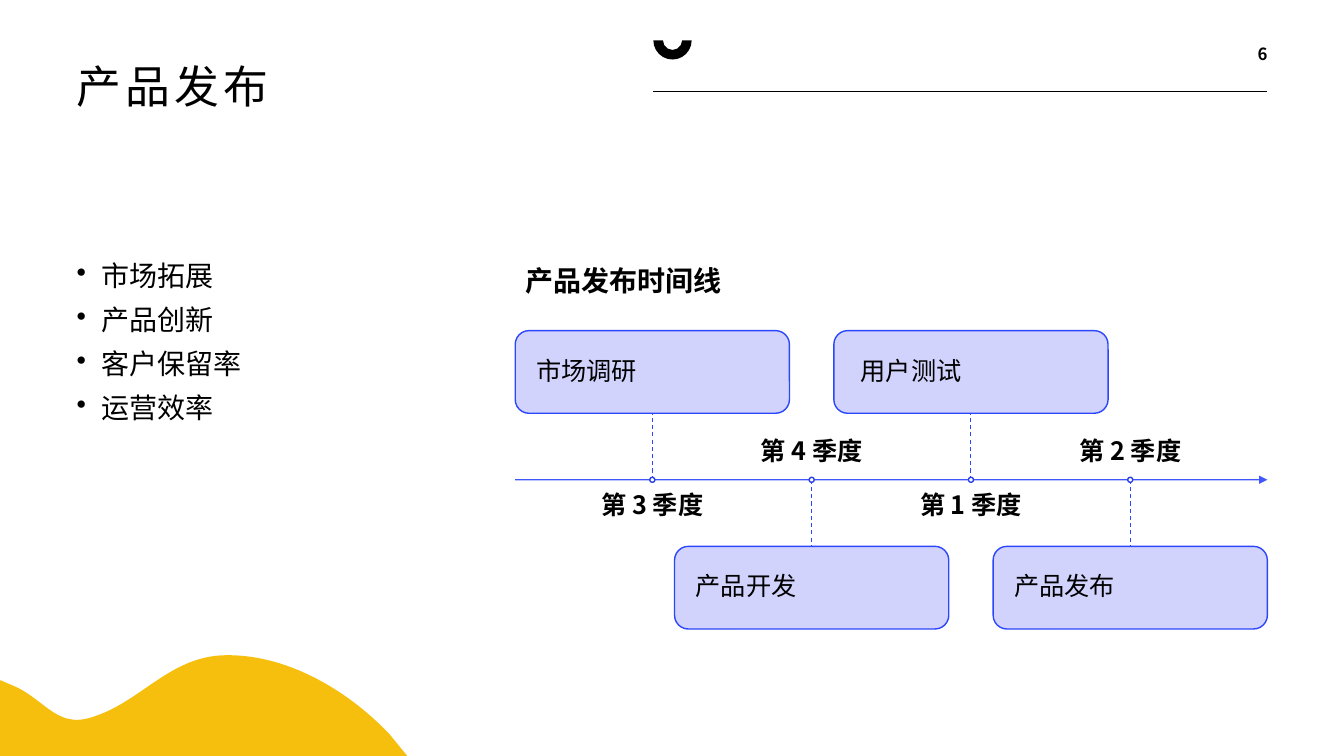
from lxml.etree import SubElement
from pptx import Presentation
from pptx.dml.color import RGBColor
from pptx.enum.dml import MSO_LINE
from pptx.enum.shapes import MSO_CONNECTOR, MSO_SHAPE
from pptx.enum.text import MSO_ANCHOR, PP_ALIGN
from pptx.oxml.ns import qn
from pptx.util import Inches, Pt

FONT = "Noto Sans CJK SC"
COLORS = {"ink": "000000", "paper": "FFFFFF", "wave": "F6BF0E", "card": "CDCFFD",
          "timeline": "2C46FB", "marker": "2840E4"}
AXIS_Y = 4.76
FIRST_QUARTER_X, QUARTER_STEP = 6.47, 1.58
CARD_WIDTH, CARD_HEIGHT = 2.72, 0.82
LABEL_WIDTH, LABEL_HEIGHT = 2.39, 0.39
MARKER_SIZE = 0.05
QUARTERS = [("第 3 季度", "市场调研"), ("第 4 季度", "产品开发"),
            ("第 1 季度", " 用户测试"), ("第 2 季度", "产品发布")]
GOALS = ["市场拓展", "产品创新", "客户保留率", "运营效率"]
WAVE_START = (2.26, 6.5)
WAVE_RIGHT = [((2.84, 6.5), (3.43, 6.83), (3.86, 7.28))]
WAVE_CORNERS = [(4.04, 7.5), (0, 7.5), (0, 6.75), (0.01, 6.75)]
WAVE_LEFT = [((0.07, 6.78), (0.13, 6.8), (0.19, 6.83)),
             ((0.47, 6.98), (0.59, 7.23), (0.93, 7.11)),
             ((1.42, 6.95), (1.69, 6.5), (2.26, 6.5))]


def rgb(name):
    """Return the named palette colour."""
    return RGBColor.from_string(COLORS[name])


def set_opacity(colored, percent):
    """Make the solid fill below an element partly transparent."""
    color = colored.find(".//" + qn("a:srgbClr"))
    SubElement(color, qn("a:alpha"), val=str(percent * 1000))


def write(frame, lines, size, bold=False, align=PP_ALIGN.LEFT, anchor=MSO_ANCHOR.TOP,
          insets=(0, 0, 0, 0), before=0, spacing=0, bullet=False):
    """Fill a text frame with one paragraph per line."""
    frame.word_wrap = True
    frame.vertical_anchor = anchor
    (frame.margin_left, frame.margin_top,
     frame.margin_right, frame.margin_bottom) = map(Inches, insets)
    for index, line in enumerate(lines):
        paragraph = frame.add_paragraph() if index else frame.paragraphs[0]
        paragraph.alignment = align
        paragraph.line_spacing = 0.9
        paragraph.space_before = Pt(before)
        if bullet:
            properties = paragraph._p.get_or_add_pPr()
            properties.set("marL", str(Inches(0.25)))
            properties.set("indent", str(Inches(-0.25)))
            SubElement(properties, qn("a:buChar"), char="•")
        run = paragraph.add_run()
        run.text = line
        font = run.font
        font.size, font.bold, font.name = Pt(size), bold, FONT
        font.color.rgb = rgb("ink")
        character = run._r.get_or_add_rPr()
        SubElement(character, qn("a:ea"), typeface=FONT)
        if spacing:
            character.set("spc", str(spacing * 100))


def add_text(slide, box, lines, size, **style):
    """Add a text box at left, top, width, height."""
    write(slide.shapes.add_textbox(*map(Inches, box)).text_frame, lines, size, **style)


def paint(shape, fill, line=None):
    """Give a shape its fill and outline."""
    shape.shadow.inherit = False
    shape.fill.solid()
    shape.fill.fore_color.rgb = rgb(fill)
    if line:
        shape.line.color.rgb = rgb(line)
        shape.line.width = Pt(1)
    else:
        shape.line.fill.background()


def add_preset(slide, preset, box, fill, line=None):
    """Add a painted preset shape."""
    shape = slide.shapes.add_shape(preset, *map(Inches, box))
    paint(shape, fill, line)
    return shape


def add_line(slide, start, end, color, width):
    """Add a straight line without a shadow."""
    line = slide.shapes.add_connector(MSO_CONNECTOR.STRAIGHT, *map(Inches, start + end))
    line.line.color.rgb = rgb(color)
    line.line.width = Pt(width)
    SubElement(line._element.spPr, qn("a:effectLst"))
    return line


def curve_points(start, curves, steps=24):
    """Return points along a chain of cubic curves."""
    points = []
    for first, second, end in curves:
        for step in range(1, steps + 1):
            t = step / steps
            weights = ((1 - t) ** 3, 3 * t * (1 - t) ** 2, 3 * t * t * (1 - t), t ** 3)
            anchors = (start, first, second, end)
            points.append(tuple(sum(w * p[axis] for w, p in zip(weights, anchors))
                                for axis in (0, 1)))
        start = end
    return points


def add_wave(slide):
    """Add the wave in the bottom left corner."""
    outline = (curve_points(WAVE_START, WAVE_RIGHT) + WAVE_CORNERS
               + curve_points(WAVE_CORNERS[-1], WAVE_LEFT))
    builder = slide.shapes.build_freeform(*map(Inches, WAVE_START), scale=1.0)
    builder.add_line_segments([(Inches(x), Inches(y)) for x, y in outline], close=True)
    paint(builder.convert_to_shape(), "wave")


def add_axis(slide):
    """Add the timeline arrow."""
    axis = add_line(slide, (5.11, AXIS_Y), (12.57, AXIS_Y), "timeline", 1)
    outline = axis.line._get_or_add_ln()
    set_opacity(outline, 90)
    SubElement(outline, qn("a:tailEnd"), type="triangle")


def add_quarter(slide, center, label, task, above):
    """Add one quarter: its card, stem, label and marker."""
    card_top, stem_end = (3.28, 4.1) if above else (5.42, 5.42)
    label_top, label_anchor = (4.89, MSO_ANCHOR.TOP) if above else (4.23, MSO_ANCHOR.BOTTOM)
    card = add_preset(slide, MSO_SHAPE.ROUNDED_RECTANGLE,
                      (center - CARD_WIDTH / 2, card_top, CARD_WIDTH, CARD_HEIGHT),
                      "card", "timeline")
    set_opacity(card._element.spPr.find(qn("a:solidFill")), 90)
    write(card.text_frame, [task], 18, anchor=MSO_ANCHOR.MIDDLE,
          insets=(0.17, 0.17, 0.17, 0.17))
    stem = add_line(slide, (center, AXIS_Y), (center, stem_end), "timeline", 0.75)
    stem.line.dash_style = MSO_LINE.DASH
    add_text(slide, (center - LABEL_WIDTH / 2, label_top, LABEL_WIDTH, LABEL_HEIGHT),
             [label], 18, bold=True, align=PP_ALIGN.CENTER, anchor=label_anchor)
    add_preset(slide, MSO_SHAPE.OVAL,
               (center - MARKER_SIZE / 2, AXIS_Y - MARKER_SIZE / 2, MARKER_SIZE, MARKER_SIZE),
               "paper", "marker")


def main():
    """Build and save the slide."""
    deck = Presentation()
    deck.slide_width, deck.slide_height = Inches(13.33), Inches(7.5)
    slide = deck.slides.add_slide(deck.slide_layouts[6])
    add_wave(slide)
    add_line(slide, (6.48, 0.91), (12.57, 0.91), "ink", 0.75)
    add_preset(slide, MSO_SHAPE.BLOCK_ARC, (6.48, 0.21, 0.38, 0.38), "ink").rotation = 180
    add_text(slide, (0.76, 0.59, 5.45, 1.96), ["产品发布"], 32, spacing=3,
             insets=(0, 0.05, 0.1, 0.05))
    add_text(slide, (12.19, 0.17, 0.38, 0.52), ["6"], 12, bold=True,
             align=PP_ALIGN.RIGHT, anchor=MSO_ANCHOR.BOTTOM, insets=(0, 0.05, 0, 0.05))
    add_text(slide, (0.76, 2.6, 3.87, 3.9), GOALS, 20, before=10, bullet=True,
             insets=(0, 0, 0.1, 0.05))
    add_text(slide, (5.11, 2.6, 7.45, 0.41), ["产品发布时间线"], 20, bold=True, before=10,
             insets=(0.1, 0.05, 0.1, 0.05))
    add_axis(slide)
    for index, (label, task) in enumerate(QUARTERS):
        add_quarter(slide, FIRST_QUARTER_X + index * QUARTER_STEP, label, task,
                    above=index % 2 == 0)
    deck.save("out.pptx")


if __name__ == "__main__":
    main()
